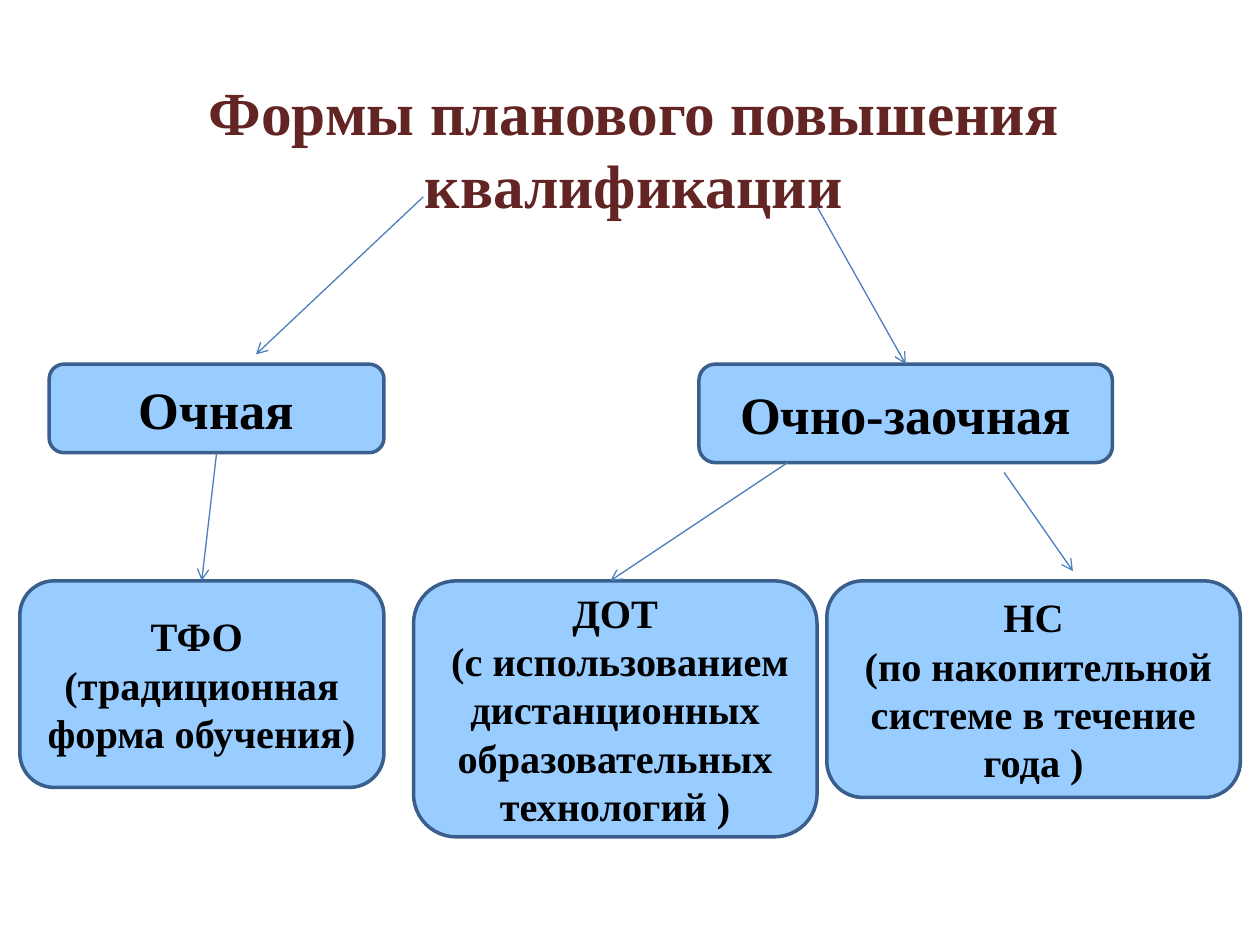
from dataclasses import dataclass

from lxml import etree
from pptx import Presentation
from pptx.dml.color import RGBColor
from pptx.enum.shapes import MSO_CONNECTOR, MSO_SHAPE
from pptx.enum.text import MSO_ANCHOR, MSO_AUTO_SIZE, PP_ALIGN
from pptx.oxml.ns import qn
from pptx.util import Pt

ROUNDED = MSO_SHAPE.ROUNDED_RECTANGLE
STRAIGHT = MSO_CONNECTOR.STRAIGHT
MIDDLE = MSO_ANCHOR.MIDDLE
CENTER = PP_ALIGN.CENTER
NO_AUTOFIT = MSO_AUTO_SIZE.NONE

FONT = "Times New Roman"
TITLE_COLOR = RGBColor(0x63, 0x25, 0x23)
TEXT_COLOR = RGBColor(0x00, 0x00, 0x00)
BOX_FILL = RGBColor(0x99, 0xCC, 0xFF)
BOX_BORDER = RGBColor(0x3A, 0x5F, 0x8C)
ARROW_COLOR = RGBColor(0x4B, 0x7E, 0xBC)

TITLE_SIZE, FORM_SIZE, METHOD_SIZE = 35, 30, 23
FORM_TOP, METHOD_TOP = 208.1, 331.9


@dataclass(frozen=True)
class Box:
    lines: tuple[str, ...]
    left: float
    top: float
    width: float
    height: float
    size: float


@dataclass(frozen=True)
class Arrow:
    start: tuple[float, float]
    end: tuple[float, float]


BOXES = (
    Box(("Очная",), 28.1, FORM_TOP, 191.3, 50.6, FORM_SIZE),
    Box(("Очно-заочная",), 399.4, FORM_TOP, 236.3, 56.3, FORM_SIZE),
    Box(("ТФО ", "(традиционная форма обучения)"),
        11.3, METHOD_TOP, 208.1, 118.1, METHOD_SIZE),
    Box(("ДОТ", " (с использованием дистанционных образовательных технологий )"),
        236.3, METHOD_TOP, 230.6, 146.3, METHOD_SIZE),
    Box(("НС", " (по накопительной системе в течение года )"),
        472.5, METHOD_TOP, 236.3, 123.8, METHOD_SIZE),
)

ARROWS = (
    # Title to forms
    Arrow((241.9, 112.5), (146.3, 202.5)),
    Arrow((466.9, 118.1), (517.5, FORM_TOP)),
    # Forms to methods
    Arrow((123.8, 258.7), (115.3, METHOD_TOP)),
    Arrow((450, 264.4), (348.8, METHOD_TOP)),
    Arrow((573.8, 270), (613.1, 326.3)),
)


def write_lines(shape, lines: tuple[str, ...], size: float, color: RGBColor) -> None:
    text_frame = shape.text_frame
    text_frame.word_wrap = True
    text_frame.auto_size = NO_AUTOFIT
    text_frame.vertical_anchor = MIDDLE
    for index, line in enumerate(lines):
        paragraph = text_frame.add_paragraph() if index else text_frame.paragraphs[0]
        paragraph.alignment = CENTER
        run = paragraph.add_run()
        run.text = line
        run.font.name = FONT
        run.font.size = Pt(size)
        run.font.bold = True
        run.font.color.rgb = color


def draw_box(slide, box: Box) -> None:
    shape = slide.shapes.add_shape(
        ROUNDED, Pt(box.left), Pt(box.top), Pt(box.width), Pt(box.height))
    shape.shadow.inherit = False
    shape.fill.solid()
    shape.fill.fore_color.rgb = BOX_FILL
    shape.line.color.rgb = BOX_BORDER
    shape.line.width = Pt(2)
    write_lines(shape, box.lines, box.size, TEXT_COLOR)


def draw_arrow(slide, arrow: Arrow) -> None:
    connector = slide.shapes.add_connector(
        STRAIGHT, *(Pt(value) for value in arrow.start + arrow.end))
    connector.line.color.rgb = ARROW_COLOR
    connector.line.width = Pt(0.75)
    # Open arrowhead at the end, no shadow
    properties = connector._element.spPr
    etree.SubElement(properties.find(qn("a:ln")), qn("a:tailEnd"), type="arrow")
    etree.SubElement(properties, qn("a:effectLst"))


def main() -> None:
    presentation = Presentation()
    presentation.slide_width, presentation.slide_height = Pt(720), Pt(540)
    slide = presentation.slides.add_slide(presentation.slide_layouts[5])

    # Title
    title = slide.shapes.title
    title.left, title.top = Pt(56.2), Pt(50.6)
    title.width, title.height = Pt(612), Pt(67.5)
    write_lines(title, ("Формы планового повышения квалификации",),
                TITLE_SIZE, TITLE_COLOR)

    # Diagram
    for box in BOXES:
        draw_box(slide, box)
    for arrow in ARROWS:
        draw_arrow(slide, arrow)

    presentation.save("out.pptx")


if __name__ == "__main__":
    main()
